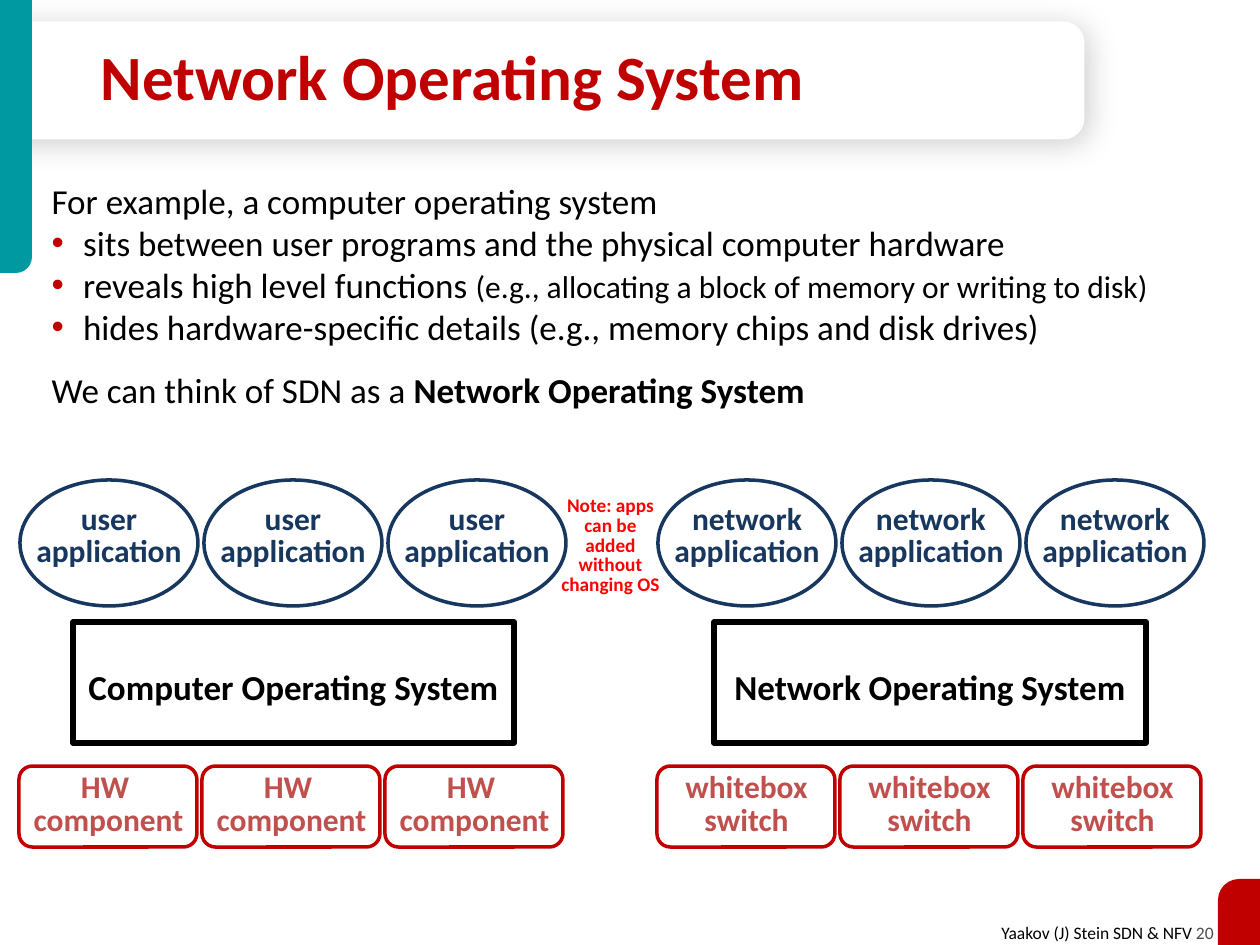
import dataclasses
import typing

import lxml.etree
import pptx
import pptx.dml.color
import pptx.enum.shapes
import pptx.enum.text
import pptx.oxml.ns
import pptx.util

RGB = pptx.dml.color.RGBColor
BLACK, WHITE, GREY = RGB(0, 0, 0), RGB(255, 255, 255), RGB(0x4D, 0x4D, 0x4D)
RED, BRIGHT_RED, BRICK = RGB(0xC0, 0, 0), RGB(0xFF, 0, 0), RGB(0xC0, 0x50, 0x4D)
NAVY, TEAL = RGB(0x17, 0x37, 0x5E), RGB(0, 0x98, 0xA1)

SHAPE = pptx.enum.shapes.MSO_SHAPE
ALIGN = pptx.enum.text.PP_ALIGN
ANCHOR = pptx.enum.text.MSO_ANCHOR
AUTO = pptx.enum.text.MSO_AUTO_SIZE
qn = pptx.oxml.ns.qn
PX = 914400 / 126
TIGHT = {"alignment": ALIGN.CENTER, "line_spacing": 0.85}


@dataclasses.dataclass(frozen=True)
class Box:
    x: int
    y: int
    w: int
    h: int

    def emu(self) -> list[pptx.util.Emu]:
        return [px(v) for v in dataclasses.astuple(self)]

    def offset(self, dx: int, dy: int, dw: int, dh: int) -> "Box":
        return Box(self.x + dx, self.y + dy, self.w + dw, self.h + dh)


@dataclasses.dataclass(frozen=True)
class Row:
    """Three equal outlined boxes, each grouped with its caption."""
    kind: typing.Any
    first: Box
    pitch: int
    caption: str
    line: RGB
    color: RGB
    caption_offset: tuple[int, int, int, int]


@dataclasses.dataclass(frozen=True)
class Line:
    """One body paragraph; runs are (text, size, bold)."""
    runs: tuple[tuple[str, int, bool], ...]
    bullet: bool = False
    before: int = 0


def px(n: float) -> pptx.util.Emu:
    return pptx.util.Emu(round(n * PX))


def apply(obj: typing.Any, **values: typing.Any) -> None:
    for name, value in values.items():
        setattr(obj, name, value)


def add_run(p: typing.Any, text: str, size: int, color: RGB, bold: bool = False) -> None:
    r = p.add_run()
    r.text = text
    apply(r.font, name="Calibri", size=pptx.util.Pt(size), bold=bold)
    r.font.color.rgb = color


def write_lines(tf: typing.Any, text: str, size: int, color: RGB, **layout: typing.Any) -> None:
    """Write bold text, one paragraph per line."""
    for i, line in enumerate(text.split("\n")):
        p = tf.add_paragraph() if i else tf.paragraphs[0]
        apply(p, **layout)
        add_run(p, line, size, color, bold=True)


def add_plain(shapes: typing.Any, kind: typing.Any, box: Box,
              fill: RGB | None = None, line: RGB | None = None, width: int = 2) -> typing.Any:
    sp = shapes.add_shape(kind, *box.emu())
    sp.shadow.inherit = False
    if fill is None:
        sp.fill.background()
    else:
        sp.fill.solid()
        sp.fill.fore_color.rgb = fill
    if line is None:
        sp.line.fill.background()
    else:
        sp.line.color.rgb = line
        sp.line.width = pptx.util.Pt(width)
    return sp


def add_caption(shapes: typing.Any, box: Box, text: str, size: int, color: RGB) -> None:
    tf = shapes.add_textbox(*box.emu()).text_frame
    tf.word_wrap = True
    write_lines(tf, text, size, color, **TIGHT)


def add_row(shapes: typing.Any, row: Row) -> None:
    for i in range(3):
        box = row.first.offset(i * row.pitch, 0, 0, 0)
        group = shapes.add_group_shape().shapes
        add_plain(group, row.kind, box, line=row.line)
        add_caption(group, box.offset(*row.caption_offset), row.caption, 18, row.color)


def add_system(shapes: typing.Any, box: Box, text: str) -> None:
    sp = add_plain(shapes, SHAPE.RECTANGLE, box, line=BLACK, width=3)
    tf = sp.text_frame
    apply(tf, word_wrap=True, vertical_anchor=ANCHOR.MIDDLE, margin_top=px(20),
          margin_left=px(6), margin_right=px(6))
    write_lines(tf, text, 20, BLACK, **TIGHT)


def add_corner(shapes: typing.Any, box: Box, fill: RGB, flip: str) -> None:
    sp = add_plain(shapes, SHAPE.ROUND_1_RECTANGLE, box, fill=fill)
    sp.adjustments[0] = 0.5
    sp.element.spPr.find(qn("a:xfrm")).set(flip, "1")


def add_title_card(shapes: typing.Any) -> None:
    sp = add_plain(shapes, SHAPE.ROUND_2_SAME_RECTANGLE, Box(483, -462, 118, 1085), fill=WHITE)
    sp.rotation = 90
    sp.adjustments[0] = 0.18
    effects = sp.element.spPr.find(qn("a:effectLst"))
    shadow = lxml.etree.SubElement(effects, qn("a:outerShdw"), {
        "blurRad": str(pptx.util.Pt(17)), "dist": str(pptx.util.Pt(3)),
        "dir": str(45 * 60000), "rotWithShape": "0"})
    color = lxml.etree.SubElement(shadow, qn("a:srgbClr"), val=str(BLACK))
    lxml.etree.SubElement(color, qn("a:alpha"), val="19000")


def place(sp: typing.Any, box: Box) -> typing.Any:
    """Move a placeholder to its box, in front of what is drawn so far."""
    for name, value in zip(("left", "top", "width", "height"), box.emu()):
        setattr(sp, name, value)
    sp.element.getparent().append(sp.element)
    apply(sp.text_frame, word_wrap=True, auto_size=AUTO.NONE)
    return sp.text_frame


def write_body(tf: typing.Any, lines: list[Line]) -> None:
    for i, line in enumerate(lines):
        p = tf.add_paragraph() if i else tf.paragraphs[0]
        p.space_before = pptx.util.Pt(line.before)
        for text, size, bold in line.runs:
            add_run(p, text, size, BLACK, bold)
        pPr = p._p.get_or_add_pPr()
        pPr.set("marL", "228600")
        pPr.set("indent", "-228600")
        if line.bullet:
            color = lxml.etree.SubElement(pPr, qn("a:buClr"))
            lxml.etree.SubElement(color, qn("a:srgbClr"), val=str(RED))
            lxml.etree.SubElement(pPr, qn("a:buChar"), char="•")
        else:
            lxml.etree.SubElement(pPr, qn("a:buNone"))


BODY = [
    Line((("For example, a computer operating system", 20, False),), before=6),
    Line((("sits between user programs and the physical computer hardware", 20, False),), True),
    Line((("reveals high level functions ", 20, False),
          ("(e.g., allocating a block of memory or writing to disk)", 18, False)), True),
    Line((("hides hardware-specific details (e.g., memory chips and disk drives)", 20, False),), True),
    Line((("We can think of SDN as a ", 20, False), ("Network Operating System", 20, True)), before=12),
]
APP = {"kind": SHAPE.OVAL, "pitch": 184, "line": NAVY, "color": NAVY,
       "caption_offset": (-4, 19, 8, -48)}
HARDWARE = {"kind": SHAPE.ROUNDED_RECTANGLE, "pitch": 183, "line": RED, "color": BRICK,
            "caption_offset": (-1, 1, 3, -3)}
ROWS = [
    Row(first=Box(20, 480, 178, 126), caption="user\napplication", **APP),
    Row(first=Box(658, 480, 178, 126), caption="network\napplication", **APP),
    Row(first=Box(19, 766, 178, 81), caption="HW \ncomponent", **HARDWARE),
    Row(first=Box(657, 766, 178, 81), caption="whitebox\nswitch", **HARDWARE),
]


def main() -> None:
    prs = pptx.Presentation()
    apply(prs, slide_width=px(1260), slide_height=px(945))
    slide = prs.slides.add_slide(prs.slide_layouts[1])
    shapes = slide.shapes

    tf = shapes.add_textbox(*Box(980, 916, 246, 34).emu()).text_frame
    tf.word_wrap = False
    p = tf.paragraphs[0]
    p.alignment = ALIGN.RIGHT
    add_run(p, "Yaakov (J) Stein SDN & NFV ", 10, BLACK)
    add_run(p, "20", 10, GREY)
    add_title_card(shapes)
    add_corner(shapes, Box(0, 0, 32, 273), TEAL, "flipV")
    add_corner(shapes, Box(1218, 879, 42, 66), RED, "flipH")

    title = place(shapes.title, Box(88, 37, 932, 89))
    title.vertical_anchor = ANCHOR.MIDDLE
    write_lines(title, "Network Operating System", 36, RED, alignment=ALIGN.LEFT, line_spacing=0.85)
    write_body(place(slide.placeholders[1], Box(39, 173, 1158, 297)), BODY)

    for row in ROWS:
        add_row(shapes, row)
    add_system(shapes, Box(73, 622, 441, 121), "Computer Operating System")
    add_system(shapes, Box(714, 622, 432, 121), "Network Operating System")
    add_caption(shapes, Box(547, 491, 127, 112), "Note: apps can be added without changing OS", 11, BRIGHT_RED)
    prs.save("out.pptx")


if __name__ == "__main__":
    main()
